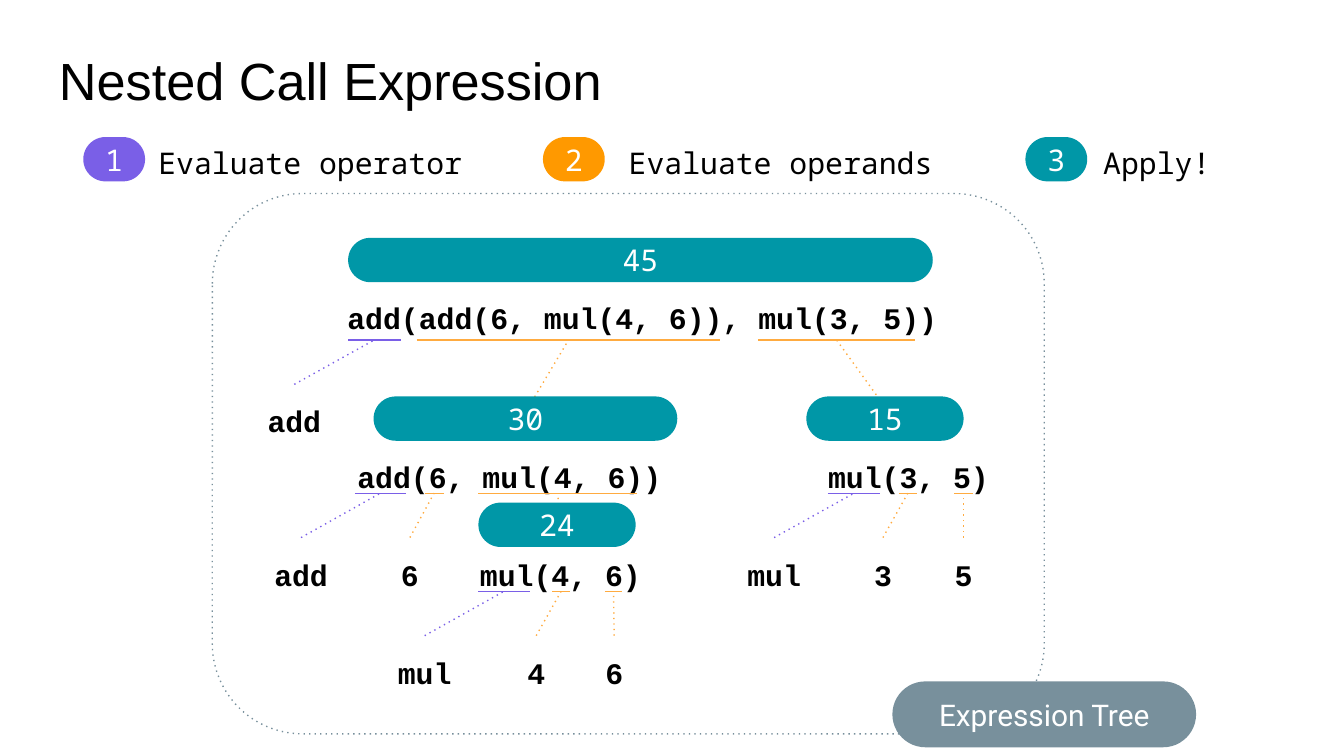
import pptx
import pptx.dml.color
import pptx.enum.dml
import pptx.enum.shapes
import pptx.enum.text
import pptx.oxml.ns
import pptx.util
from lxml import etree

Inches = pptx.util.Inches
Pt = pptx.util.Pt
SHAPES = pptx.enum.shapes.MSO_SHAPE
ALIGN = pptx.enum.text.PP_ALIGN
MIDDLE = pptx.enum.text.MSO_ANCHOR.MIDDLE
STRAIGHT = pptx.enum.shapes.MSO_CONNECTOR.STRAIGHT
DOTS = pptx.enum.dml.MSO_LINE.ROUND_DOT
qn = pptx.oxml.ns.qn

PURPLE, ORANGE, TEAL, GREY = "7A5FE7", "FF9900", "0097A7", "78909C"
AMBER, BLACK, WHITE = "FFAB40", "000000", "FFFFFF"
CODE = {"name": "Courier New", "size": Pt(16), "bold": True}
MONO = {"name": "Noto Sans Mono", "size": Pt(16)}
LABEL = {"name": "Roboto", "size": Pt(16)}
HEADING = {"name": "Arial", "size": Pt(28)}
LEGEND_SPACING = {"line_spacing": 1.15, "space_after": Pt(16)}
CODE_SPACING = {"alignment": ALIGN.CENTER, **LEGEND_SPACING}
INSETS = {"margin_left": Inches(0.1), "margin_top": Inches(0.1),
          "margin_right": Inches(0.1), "margin_bottom": Inches(0.1), "word_wrap": True}


def colour(value):
    return pptx.dml.color.RGBColor.from_string(value)


def write(box, words, shade, font, spacing, frame=INSETS):
    paragraph = box.text_frame.paragraphs[0]
    run = paragraph.add_run()
    run.text = words
    run.font.color.rgb = colour(shade)
    for target, values in ((box.text_frame, frame), (paragraph, spacing), (run.font, font)):
        for key, value in values.items():
            setattr(target, key, value)


deck = pptx.Presentation()
deck.slide_width = Inches(10)
deck.slide_height = deck.slide_width * 9 // 16
slide = deck.slides.add_slide(deck.slide_layouts[6])
shapes = slide.shapes

title = shapes.add_textbox(Inches(0.34), Inches(0.26), Inches(9.32), Inches(0.63))
write(title, "Nested Call Expression", BLACK, HEADING, {})

tree_border = shapes.add_shape(
    SHAPES.ROUNDED_RECTANGLE, Inches(1.58), Inches(1.44), Inches(6.19), Inches(4.02))
tree_border.shadow.inherit = False
tree_border.fill.background()
tree_border.line.color.rgb = colour(GREY)
dotted_lines = [tree_border.line]

for words, left, width in (("Evaluate operator", 1.08, 2.6),
                           ("Evaluate operands", 4.58, 2.6),
                           ("Apply!", 8.11, 1.39)):
    step = shapes.add_textbox(Inches(left), Inches(0.94), Inches(width), Inches(0.49))
    write(step, words, BLACK, MONO, LEGEND_SPACING)

root_call = shapes.add_textbox(Inches(1.91), Inches(2.09), Inches(5.74), Inches(0.49))
write(root_call, "add(add(6, mul(4, 6)), mul(3, 5))", BLACK, CODE, CODE_SPACING)

call_widths = {"add(6, mul(4, 6))": 2.52, "mul(4, 6)": 1.42, "mul(3, 5)": 1.42}
calls = [
    (2.53, 0.74, [(2.59, 2.98, 2.19, "add"), (3.1, 5.36, 3.79, "add(6, mul(4, 6))"),
                  (5.64, 6.81, 6.76, "mul(3, 5)")]),
    (3.67, 0.33, [(2.64, 3.02, 2.24, "add"), (3.16, 3.3, 3.05, "6"),
                  (3.56, 4.74, 4.17, "mul(4, 6)")]),
    (4.4, 0.33, [(3.56, 3.94, 3.16, "mul"), (4.11, 4.24, 3.99, "4"),
                 (4.5, 4.63, 4.57, "6")]),
    (3.67, 0.33, [(6.16, 6.55, 5.76, "mul"), (6.69, 6.82, 6.57, "3"),
                  (7.1, 7.24, 7.17, "5")]),
]
for underline, operand_drop, parts in calls:
    for position, (start, end, foot, expression) in enumerate(parts):
        shade = AMBER if position else PURPLE
        bottom = underline + (operand_drop if position else 0.33)
        middle = (start + end) / 2
        for dotted, x1, y1, x2, y2 in ((False, start, underline, end, underline),
                                       (True, foot, bottom, middle, underline)):
            stroke = shapes.add_connector(
                STRAIGHT, Inches(x1), Inches(y1), Inches(x2), Inches(y2))
            stroke.line.color.rgb = colour(shade)
            stroke.line.width = Pt(0.75)
            etree.SubElement(stroke._element.spPr, qn("a:effectLst"))
            if dotted:
                dotted_lines.append(stroke.line)
        width = call_widths.get(expression, 0.68)
        node = shapes.add_textbox(
            Inches(foot - width / 2), Inches(bottom), Inches(width), Inches(0.49))
        write(node, expression, BLACK, CODE, CODE_SPACING)

for line in dotted_lines:
    line.width = Pt(0.75)
    line.dash_style = DOTS
    line._ln.find(qn("a:prstDash")).set("val", "dot")

pills = [
    ("1", 0.62, 1.02, 0.46, 0.33, PURPLE, MONO),
    ("2", 4.04, 1.02, 0.46, 0.33, ORANGE, MONO),
    ("3", 7.63, 1.02, 0.46, 0.33, TEAL, MONO),
    ("24", 3.56, 3.74, 1.17, 0.33, TEAL, MONO),
    ("30", 2.78, 2.95, 2.26, 0.33, TEAL, MONO),
    ("15", 6, 2.95, 1.17, 0.33, TEAL, MONO),
    ("45", 2.59, 1.77, 4.35, 0.33, TEAL, MONO),
    ("Expression Tree", 6.64, 5.07, 2.26, 0.49, GREY, LABEL),
]
for words, left, top, width, height, shade, font in pills:
    pill = shapes.add_shape(
        SHAPES.ROUNDED_RECTANGLE, Inches(left), Inches(top), Inches(width), Inches(height))
    pill.adjustments[0] = 0.5
    pill.shadow.inherit = False
    pill.fill.solid()
    pill.fill.fore_color.rgb = colour(shade)
    pill.line.fill.background()
    write(pill, words, WHITE, font, {"alignment": ALIGN.CENTER},
          {**INSETS, "vertical_anchor": MIDDLE})

deck.save("out.pptx")
